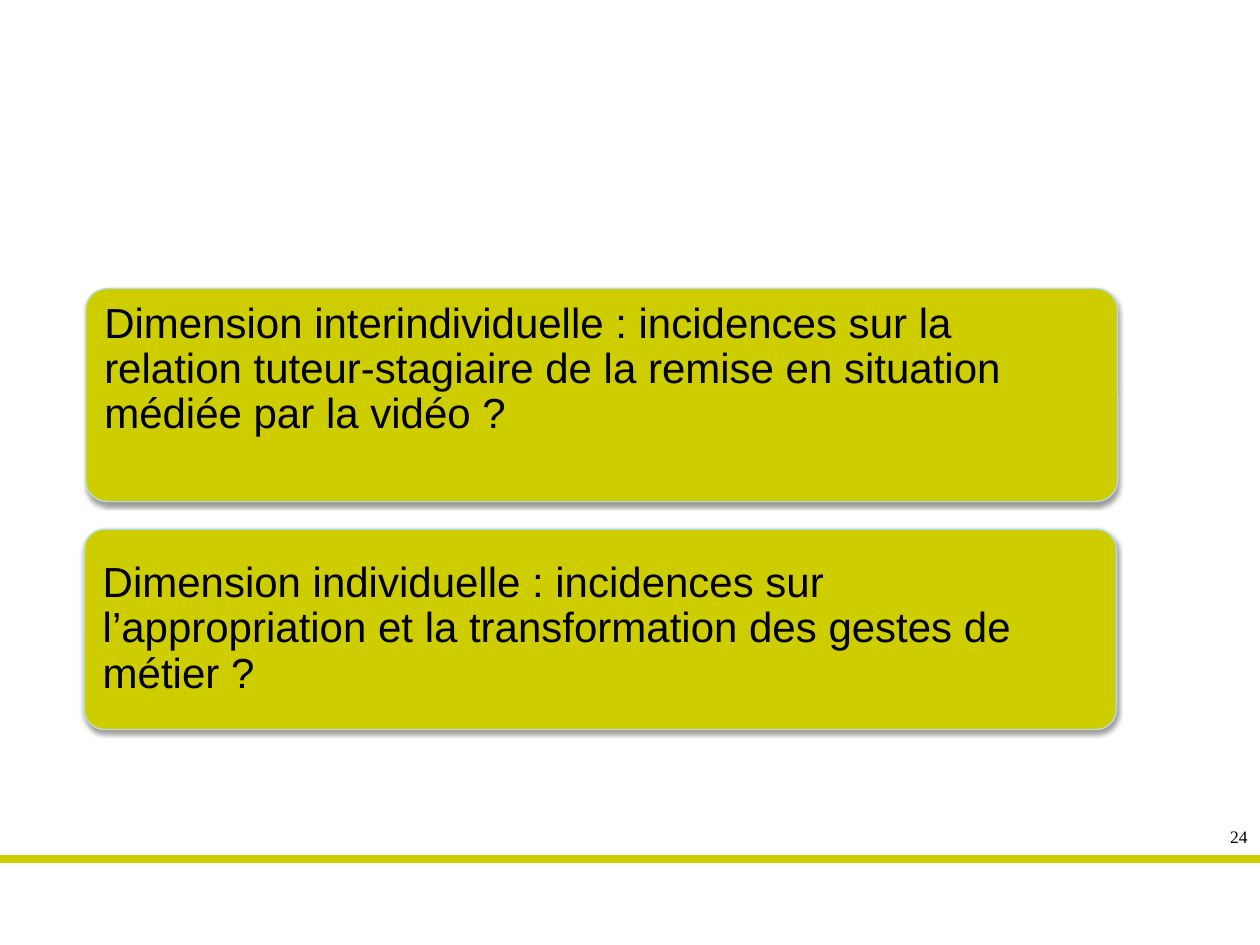
from lxml import etree
from pptx import Presentation
from pptx.dml.color import RGBColor
from pptx.enum.shapes import MSO_CONNECTOR, MSO_SHAPE
from pptx.enum.text import MSO_ANCHOR, PP_ALIGN
from pptx.oxml.ns import qn
from pptx.util import Inches, Pt

STRAIGHT = MSO_CONNECTOR.STRAIGHT
ROUNDED = MSO_SHAPE.ROUNDED_RECTANGLE
LEFT, RIGHT = PP_ALIGN.LEFT, PP_ALIGN.RIGHT
TOP, MIDDLE = MSO_ANCHOR.TOP, MSO_ANCHOR.MIDDLE

OLIVE = RGBColor(0xCD, 0xCD, 0x00)
PALE_BLUE = RGBColor(0xB6, 0xDC, 0xDF)
BLACK = RGBColor(0x00, 0x00, 0x00)

SLIDE_WIDTH, SLIDE_HEIGHT = 10, 7.5
RULE_TOP = 6.82
PAGE_NUMBER = "24"
CARD_WIDTH = 8.19
INSET = 0.1

CARDS = [
    {
        "text": "Dimension interindividuelle : incidences sur la relation "
                "tuteur-stagiaire de la remise en situation médiée par la vidéo ?",
        "left": 0.68, "top": 2.29, "height": 1.69, "bottom_inset": 0.5,
    },
    {
        "text": "Dimension individuelle : incidences sur l’appropriation et la "
                "transformation des gestes de métier ?",
        "left": 0.67, "top": 4.2, "height": 1.59, "bottom_inset": INSET,
    },
]


def write_text(box, text, size, font, align=LEFT, anchor=TOP, spacing=1.0):
    frame = box.text_frame
    frame.word_wrap = True
    frame.vertical_anchor = anchor
    para = frame.paragraphs[0]
    para.alignment = align
    para.line_spacing = spacing
    span = para.add_run()
    span.text = text
    span.font.size = Pt(size)
    span.font.name = font
    span.font.color.rgb = BLACK
    return frame


def add_shadow(shape):
    shape.shadow.inherit = False
    effects = shape._element.spPr.find(qn("a:effectLst"))
    shadow = etree.SubElement(
        effects, qn("a:outerShdw"), blurRad=str(Pt(3.1)), dist=str(Pt(1.6)),
        dir="5400000", rotWithShape="0")
    color = etree.SubElement(shadow, qn("a:srgbClr"), val=str(BLACK))
    etree.SubElement(color, qn("a:alpha"), val="38000")


def add_rule(page):
    rule = page.shapes.add_connector(
        STRAIGHT, Inches(SLIDE_WIDTH), Inches(RULE_TOP), 0, Inches(RULE_TOP))
    rule.line.color.rgb = OLIVE
    rule.line.width = Pt(4.5)
    etree.SubElement(rule._element.spPr, qn("a:effectLst"))


def add_card(page, card):
    box = page.shapes.add_shape(
        ROUNDED, Inches(card["left"]), Inches(card["top"]),
        Inches(CARD_WIDTH), Inches(card["height"]))
    box.adjustments[0] = 0.1
    box.fill.solid()
    box.fill.fore_color.rgb = OLIVE
    box.line.color.rgb = PALE_BLUE
    box.line.width = Pt(0.75)
    add_shadow(box)
    frame = write_text(box, card["text"], 24, "Arial", anchor=MIDDLE, spacing=0.9)
    frame.margin_left = frame.margin_right = frame.margin_top = Inches(INSET)
    frame.margin_bottom = Inches(card["bottom_inset"])


def main():
    deck = Presentation()
    deck.slide_width, deck.slide_height = Inches(SLIDE_WIDTH), Inches(SLIDE_HEIGHT)
    page = deck.slides.add_slide(deck.slide_layouts[6])
    add_rule(page)
    number = page.shapes.add_textbox(
        Inches(9.49), Inches(6.51), Inches(0.51), Inches(0.27))
    write_text(number, PAGE_NUMBER, 10, "Times New Roman", align=RIGHT)
    for card in CARDS:
        add_card(page, card)
    deck.save("out.pptx")


if __name__ == "__main__":
    main()
